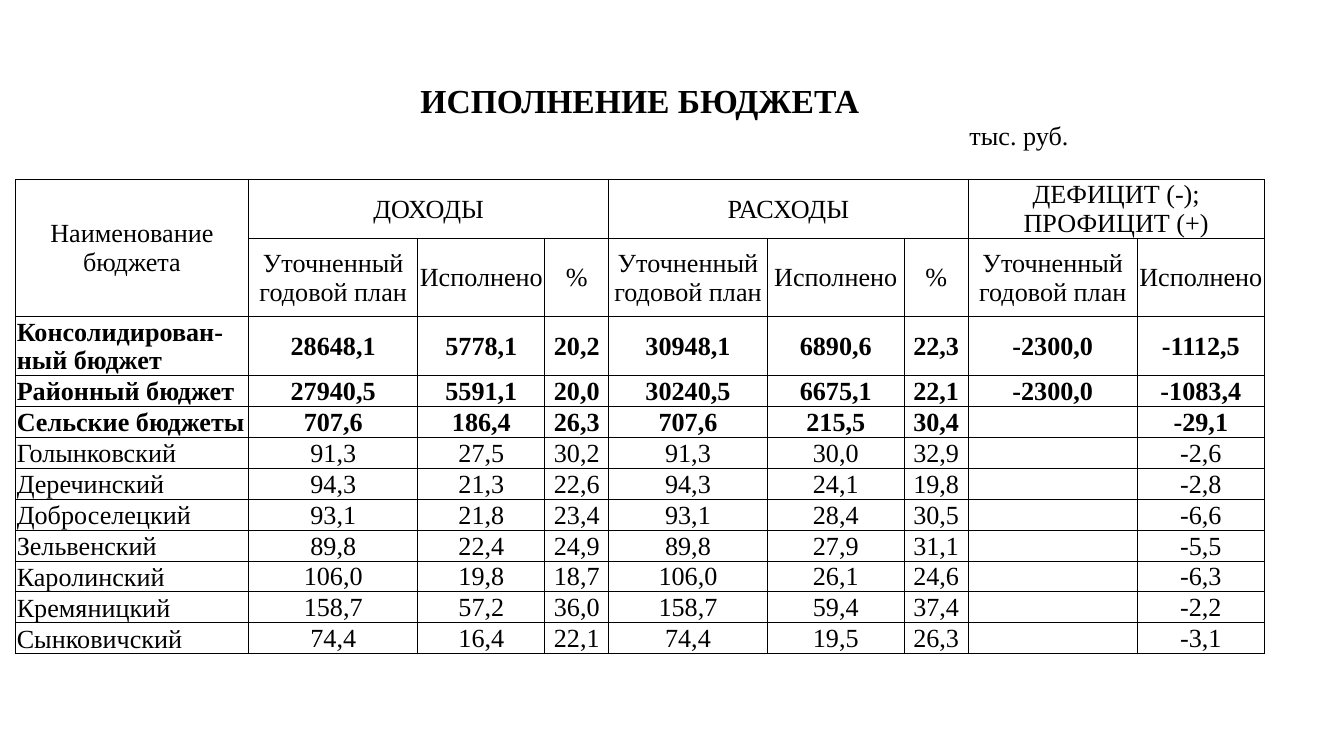
import pptx
import pptx.dml.color
import pptx.enum.text
import pptx.oxml
import pptx.oxml.ns
import pptx.util

BLACK = pptx.dml.color.RGBColor(0, 0, 0)
ALIGN = pptx.enum.text.PP_ALIGN
ANCHOR = pptx.enum.text.MSO_ANCHOR

# The 16:9 slide is a grid of square units, 1000 columns wide
SLIDE_WIDTH = 10
SLIDE_HEIGHT = SLIDE_WIDTH * 9 / 16
GRID_COLUMNS = 1000
GRID_ROWS = GRID_COLUMNS * 9 / 16
COLUMN_WIDTHS = [173.5, 101, 25, 65, 29.5, 47.5, 118, 21, 81, 9, 38.5, 126, 52, 42.5]
ROW_HEIGHTS = [29, 43.5, 43, 58, 44] + [23] * 9

# First table column and number of columns of each cell in a row
UNIT_SPANS = [(2, 2), (4, 2), (6, 2), (8, 2), (11, 2)]
GROUP_SPANS = [(1, 5), (6, 5), (11, 3)]
DATA_SPANS = [(0, 1), (1, 2), (3, 2), (5, 1), (6, 1), (7, 2), (9, 2), (11, 1), (12, 2)]

GROUPS = ["ДОХОДЫ", "РАСХОДЫ", "ДЕФИЦИТ (-); ПРОФИЦИТ (+)"]
PLAN, DONE = "Уточненный годовой план", "Исполнено"
MEASURES = [PLAN, DONE, "%", PLAN, DONE, "%", PLAN, DONE]
BUDGETS = [
    ("Консолидирован-ный бюджет", "28648,1", "5778,1", "20,2", "30948,1", "6890,6", "22,3", "-2300,0", "-1112,5"),
    ("Районный бюджет", "27940,5", "5591,1", "20,0", "30240,5", "6675,1", "22,1", "-2300,0", "-1083,4"),
    ("Сельские бюджеты", "707,6", "186,4", "26,3", "707,6", "215,5", "30,4", "", "-29,1"),
    ("Голынковский", "91,3", "27,5", "30,2", "91,3", "30,0", "32,9", "", "-2,6"),
    ("Деречинский", "94,3", "21,3", "22,6", "94,3", "24,1", "19,8", "", "-2,8"),
    ("Доброселецкий", "93,1", "21,8", "23,4", "93,1", "28,4", "30,5", "", "-6,6"),
    ("Зельвенский", "89,8", "22,4", "24,9", "89,8", "27,9", "31,1", "", "-5,5"),
    ("Каролинский", "106,0", "19,8", "18,7", "106,0", "26,1", "24,6", "", "-6,3"),
    ("Кремяницкий", "158,7", "57,2", "36,0", "158,7", "59,4", "37,4", "", "-2,2"),
    ("Сынковичский", "74,4", "16,4", "22,1", "74,4", "19,5", "26,3", "", "-3,1"),
]
SUMMARY_ROWS = 3


class BudgetSlide:
    font_name = "Times New Roman"
    text_size = 14
    border_width = pptx.util.Pt(0.5)

    def __init__(self, presentation):
        self.slide = presentation.slides.add_slide(presentation.slide_layouts[6])
        self.unit_x = presentation.slide_width / GRID_COLUMNS
        self.unit_y = presentation.slide_height / GRID_ROWS

    def x(self, columns):
        return round(columns * self.unit_x)

    def y(self, rows):
        return round(rows * self.unit_y)

    def add_table(self, left, top, widths, heights, open_rows):
        """Add a plain ruled table; the first open_rows rows have no rules."""
        frame = self.slide.shapes.add_table(
            len(heights), len(widths), self.x(left), self.y(top),
            self.x(sum(widths)), self.y(sum(heights)))
        self.table = frame.table
        self.table.first_row = self.table.horz_banding = False
        for column, width in zip(self.table.columns, widths):
            column.width = self.x(width)
        for index, (row, height) in enumerate(zip(self.table.rows, heights)):
            row.height = self.y(height)
            for cell in row.cells:
                if index >= open_rows:
                    edges = "LRTB"
                else:
                    edges = "B" if index == open_rows - 1 else ""
                self.format_cell(cell, edges)

    def format_cell(self, cell, edges):
        namespace = pptx.oxml.ns.nsdecls("a")
        properties = cell._tc.get_or_add_tcPr()
        for edge in "LRTB":
            fill = f'<a:solidFill><a:srgbClr val="{BLACK}"/></a:solidFill>' if edge in edges else "<a:noFill/>"
            properties.append(pptx.oxml.parse_xml(
                f'<a:ln{edge} {namespace} w="{self.border_width}">{fill}</a:ln{edge}>'))
        cell.fill.background()
        margins = {"margin_left": 1, "margin_right": 1, "margin_top": 1, "margin_bottom": 0}
        for name, value in margins.items():
            setattr(cell, name, self.y(value))
        # Empty cells keep the height of the body text
        cell.text_frame.paragraphs[0]._p.append(pptx.oxml.parse_xml(
            f'<a:endParaRPr {namespace} sz="{self.text_size * 100}">'
            f'<a:latin typeface="{self.font_name}"/></a:endParaRPr>'))

    def merge(self, row, column, row_span, column_span):
        cell = self.table.cell(row, column)
        if row_span * column_span > 1:
            cell.merge(self.table.cell(row + row_span - 1, column + column_span - 1))
        return cell

    def add_text(self, row, column, text, row_span=1, column_span=1,
                 align=ALIGN.CENTER, anchor=ANCHOR.MIDDLE, size=text_size, bold=False):
        cell = self.merge(row, column, row_span, column_span)
        cell.vertical_anchor = anchor
        if not text:
            return
        cell.text_frame.text = text
        font_format = {"name": self.font_name, "size": pptx.util.Pt(size), "bold": bold}
        for paragraph in cell.text_frame.paragraphs:
            paragraph.alignment = align
            for run in paragraph.runs:
                for name, value in font_format.items():
                    setattr(run.font, name, value)
                run.font.color.rgb = BLACK

    def add_row(self, row, spans, texts, **style):
        for (column, column_span), text in zip(spans, texts):
            self.add_text(row, column, text, column_span=column_span, **style)


def main():
    presentation = pptx.Presentation()
    presentation.slide_width = pptx.util.Inches(SLIDE_WIDTH)
    presentation.slide_height = pptx.util.Inches(SLIDE_HEIGHT)
    budget = BudgetSlide(presentation)
    budget.add_table(11.5, 61, COLUMN_WIDTHS, ROW_HEIGHTS, open_rows=2)

    # Title and unit of measure
    budget.add_text(0, 0, "ИСПОЛНЕНИЕ БЮДЖЕТА", column_span=len(COLUMN_WIDTHS), size=18, bold=True)
    budget.add_row(1, UNIT_SPANS, ["", "", "", "", "тыс. руб."], align=ALIGN.LEFT, anchor=ANCHOR.TOP)

    # Two header rows
    budget.add_text(2, 0, "Наименование\nбюджета", row_span=2)
    budget.add_row(2, GROUP_SPANS, GROUPS)
    budget.add_row(3, DATA_SPANS[1:], MEASURES)

    # Budgets: summary rows in bold, then the village councils
    for index, (name, *values) in enumerate(BUDGETS):
        row, bold = index + 4, index < SUMMARY_ROWS
        budget.add_row(row, DATA_SPANS[:1], [name], align=ALIGN.LEFT, anchor=ANCHOR.BOTTOM, bold=bold)
        budget.add_row(row, DATA_SPANS[1:], values, bold=bold)

    presentation.save("out.pptx")


if __name__ == "__main__":
    main()
